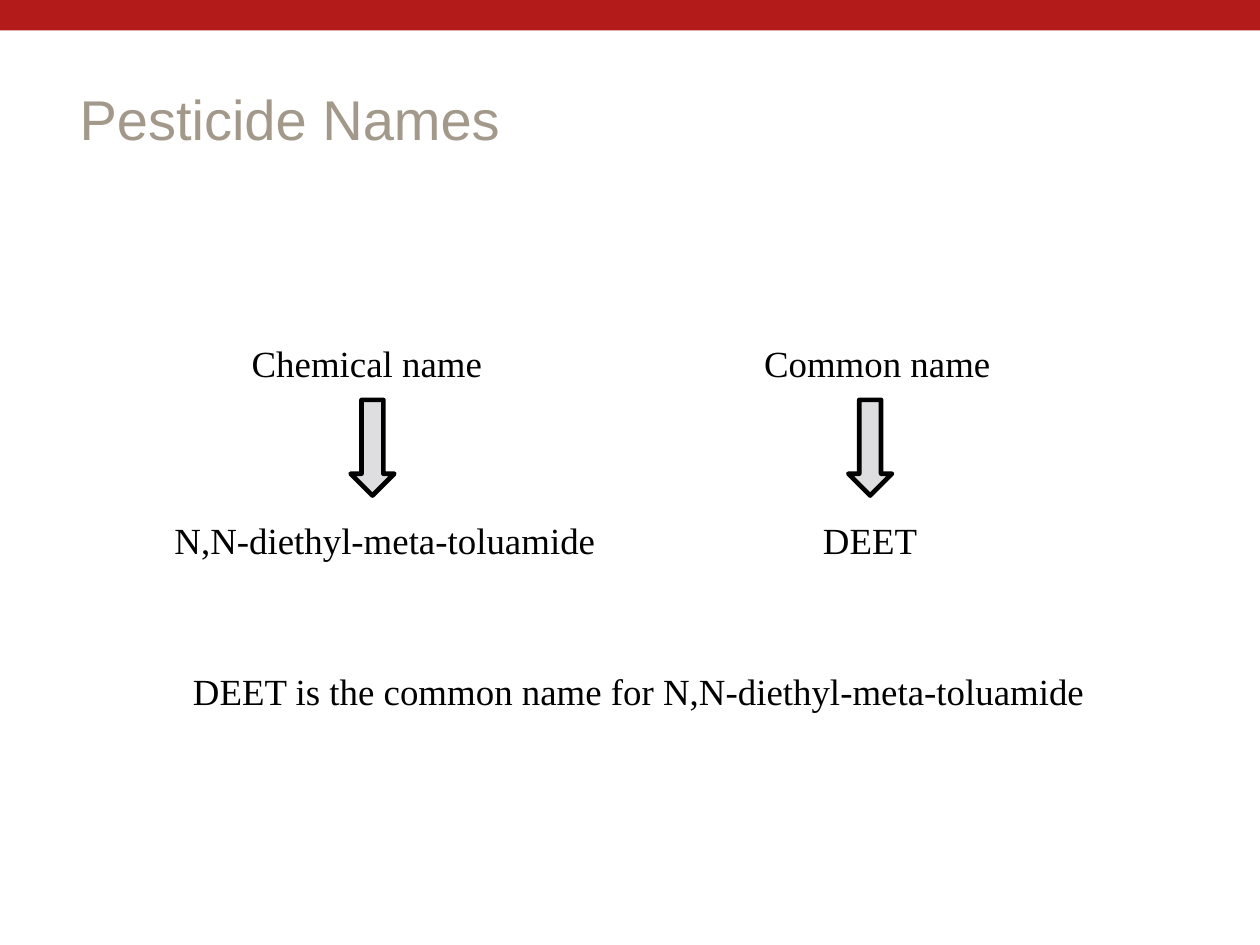
from dataclasses import dataclass

from pptx import Presentation
from pptx.dml.color import RGBColor
from pptx.enum.shapes import MSO_SHAPE
from pptx.enum.text import MSO_ANCHOR, PP_ALIGN
from pptx.util import Pt

RECTANGLE, DOWN_ARROW = MSO_SHAPE.RECTANGLE, MSO_SHAPE.DOWN_ARROW
LEFT, CENTER = PP_ALIGN.LEFT, PP_ALIGN.CENTER
TOP, MIDDLE = MSO_ANCHOR.TOP, MSO_ANCHOR.MIDDLE


@dataclass(frozen=True)
class Theme:
    band: RGBColor = RGBColor(0xB3, 0x1B, 0x1B)
    title: RGBColor = RGBColor(0xA2, 0x99, 0x8B)
    text: RGBColor = RGBColor(0, 0, 0)
    arrow: RGBColor = RGBColor(0xDE, 0xDE, 0xE0)
    title_font: str = "Arial"
    body_font: str = "Times New Roman"
    title_size: float = 24
    body_size: float = 15.8


THEME = Theme()
SLIDE_WIDTH, SLIDE_HEIGHT = 540, 405
LINE_HEIGHT = 26.6
ARROW_WIDTH, ARROW_HEIGHT = 18.7, 41


def add_text(shapes, box, text, font_name=THEME.body_font, size=THEME.body_size,
             color=THEME.text, alignment=LEFT, anchor=TOP):
    shape = shapes.add_textbox(*map(Pt, box))
    frame = shape.text_frame
    frame.word_wrap = True
    frame.vertical_anchor = anchor
    frame.text = text
    paragraph = frame.paragraphs[0]
    paragraph.alignment = alignment
    font = paragraph.runs[0].font
    font.name, font.size = font_name, Pt(size)
    font.color.rgb = color


def add_filled_shape(shapes, kind, box, fill):
    shape = shapes.add_shape(kind, *map(Pt, box))
    shape.shadow.inherit = False
    shape.fill.solid()
    shape.fill.fore_color.rgb = fill
    shape.line.fill.background()
    return shape


def add_header(slide, box):
    """Coloured band with the slide title below it."""
    left, top, width, height = box
    add_filled_shape(slide.shapes, RECTANGLE, (left, top, width, 13), THEME.band)
    add_text(slide.shapes, (left + 27, top + 16.6, width - 54, height - 16.6),
             "Pesticide Names", THEME.title_font, THEME.title_size,
             THEME.title, anchor=MIDDLE)


def add_name_column(slide, box, label, label_offset, name, alignment, arrow_offset):
    """Kind of name, arrow down, and the name itself as one group."""
    left, top, width, height = box
    shapes = slide.shapes.add_group_shape().shapes
    add_text(shapes, (left + label_offset, top, 117.4, LINE_HEIGHT), label)
    add_text(shapes, (left, top + height - LINE_HEIGHT, width, LINE_HEIGHT),
             name, alignment=alignment)
    arrow = add_filled_shape(
        shapes, DOWN_ARROW,
        (left + arrow_offset, top + 28.8, ARROW_WIDTH, ARROW_HEIGHT), THEME.arrow)
    arrow.line.color.rgb = THEME.text
    arrow.line.width = Pt(2)


def main():
    presentation = Presentation()
    presentation.slide_width = Pt(SLIDE_WIDTH)
    presentation.slide_height = Pt(SLIDE_HEIGHT)
    slide = presentation.slides.add_slide(presentation.slide_layouts[6])

    add_header(slide, (0, 0, SLIDE_WIDTH, 84.2))

    # Chemical and common name side by side
    add_name_column(slide, (67.7, 142.6, 195.8, 102.2), "Chemical name", 33.1,
                    "N,N-diethyl-meta-toluamide", LEFT, 82.6)
    add_name_column(slide, (334.8, 142.6, 76.3, 102.2), "Common name", -14.4,
                    "DEET", CENTER, 28.8)

    # Conclusion
    add_text(slide.shapes, (75.6, 283, 399.6, LINE_HEIGHT),
             "DEET is the common name for N,N-diethyl-meta-toluamide")

    presentation.save("out.pptx")


if __name__ == "__main__":
    main()
